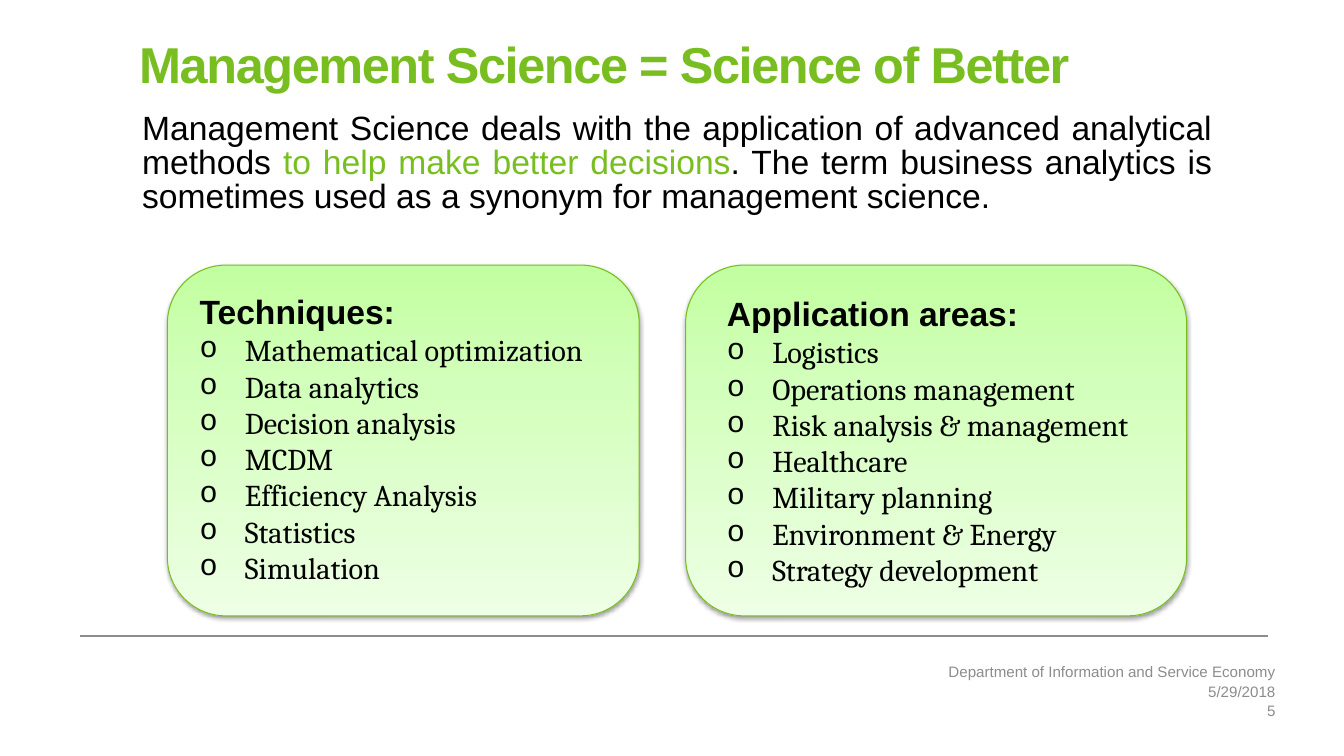
import pptx
import pptx.util
import pptx.oxml
import pptx.oxml.ns
import pptx.dml.color
import pptx.enum.shapes
import pptx.enum.text

Inches = pptx.util.Inches
Pt = pptx.util.Pt
RGBColor = pptx.dml.color.RGBColor
Align = pptx.enum.text.PP_ALIGN
Anchor = pptx.enum.text.MSO_ANCHOR

GREEN = RGBColor(0x78, 0xBE, 0x20)
PANEL_EDGE = RGBColor(0x76, 0xBE, 0x1B)
GREY = RGBColor(0x8C, 0x8C, 0x8C)
BLACK = RGBColor(0, 0, 0)
PANEL_STOPS = [
    (0, RGBColor(0xC2, 0xFF, 0xA0)),
    (35, RGBColor(0xD3, 0xFF, 0xBC)),
    (100, RGBColor(0xEE, 0xFF, 0xE5)),
]

TITLE_FONT = {"name": "Arial", "size": Pt(36), "bold": True}
BODY_FONT = {"name": "Arial", "size": Pt(24)}
HEADING_FONT = {"name": "Arial", "size": Pt(24), "bold": True}
ITEM_FONT = {"name": "Cambria", "size": Pt(21.6), "bold": False}
FOOTER_FONT = {"name": "Arial", "size": Pt(10.8)}

TITLE = "Management Science = Science of Better"
DEFINITION = [
    ("Management Science deals with the application of advanced analytical methods ", BLACK),
    ("to help make better decisions", GREEN),
    (". The term business analytics is sometimes used as a synonym for management science. ", BLACK),
]
TECHNIQUES = [
    "Mathematical optimization", "Data analytics", "Decision analysis", "MCDM",
    "Efficiency Analysis", "Statistics", "Simulation",
]
APPLICATIONS = [
    "Logistics", "Operations management", "Risk analysis & management",
    "Healthcare", "Military planning", "Environment & Energy",
    "Strategy development",
]
PANELS = [
    ((1.66, 2.63, 4.68, 3.48), (1.98, 2.89, 4.47, 3.31), "Techniques:", TECHNIQUES),
    ((6.8, 2.63, 4.97, 3.48), (7.21, 2.91, 4.47, 3.31), "Application areas:", APPLICATIONS),
]
FOOTER = [
    ("Department of Information and Service Economy", 6.58, 0.17),
    ("5/29/2018", 6.76, 0.2),
    ("5", 6.96, 0.18),
]


def set_values(target, values):
    for attribute, value in values.items():
        setattr(target, attribute, value)


def add_xml(parent, tag, content="", attributes=""):
    namespace = pptx.oxml.ns.nsdecls("a")
    parent.append(pptx.oxml.parse_xml(
        f"<a:{tag} {namespace} {attributes}>{content}</a:{tag}>"))


def set_frame(frame, margins=(0, 0, 0, 0), anchor=Anchor.TOP):
    sides = ("margin_left", "margin_top", "margin_right", "margin_bottom")
    set_values(frame, {side: Inches(margin) for side, margin in zip(sides, margins)})
    set_values(frame, {
        "word_wrap": True,
        "vertical_anchor": anchor,
        "auto_size": pptx.enum.text.MSO_AUTO_SIZE.NONE,
    })


def add_run(paragraph, text, font, color):
    run = paragraph.add_run()
    run.text = text
    set_values(run.font, font)
    run.font.color.rgb = color
    return run


def add_frame(slide, place, **frame_format):
    frame = slide.shapes.add_textbox(*map(Inches, place)).text_frame
    set_frame(frame, **frame_format)
    return frame


def add_title(slide):
    title = slide.shapes.title
    place = map(Inches, (1.38, 0.42, 10.61, 0.5))
    set_values(title, dict(zip(("left", "top", "width", "height"), place)))
    set_frame(title.text_frame)
    paragraph = title.text_frame.paragraphs[0]
    set_values(paragraph, {"alignment": Align.LEFT, "line_spacing": 0.85})
    heading = add_run(paragraph, TITLE, TITLE_FONT, GREEN)
    heading.font._element.set("spc", "-100")


def add_definition(slide):
    paragraph = add_frame(slide, (1.41, 1.12, 10.61, 1.22)).paragraphs[0]
    set_values(paragraph, {"alignment": Align.JUSTIFY, "line_spacing": 0.85})
    for text, color in DEFINITION:
        add_run(paragraph, text, BODY_FONT, color)


def add_panel(slide, place):
    panel = slide.shapes.add_shape(
        pptx.enum.shapes.MSO_SHAPE.ROUNDED_RECTANGLE, *map(Inches, place))
    panel.line.color.rgb = PANEL_EDGE
    panel.line.width = Pt(0.75)
    panel.fill.gradient()
    panel.fill.gradient_angle = 270
    stops = panel._element.spPr.find(".//" + pptx.oxml.ns.qn("a:gsLst"))
    stops.clear()
    for percent, color in PANEL_STOPS:
        add_xml(stops, "gs", f'<a:srgbClr val="{color}"/>', f'pos="{percent * 1000}"')
    add_xml(
        panel._element.spPr, "effectLst",
        f'<a:outerShdw blurRad="{Pt(3.1)}" dist="{Pt(1.6)}" dir="5400000" rotWithShape="0">'
        f'<a:srgbClr val="{BLACK}"><a:alpha val="38000"/></a:srgbClr></a:outerShdw>')


def add_list(slide, place, heading, items):
    frame = add_frame(slide, place)
    add_run(frame.paragraphs[0], heading, HEADING_FONT, BLACK)
    for item in items:
        paragraph = frame.add_paragraph()
        properties = paragraph._p.get_or_add_pPr()
        properties.set("marL", str(Inches(0.45)))
        properties.set("indent", str(Inches(-0.45)))
        add_xml(properties, "buFont", attributes='typeface="Courier New"')
        add_xml(properties, "buChar", attributes='char="o"')
        add_run(paragraph, item, ITEM_FONT, BLACK)


def add_rule(slide):
    rule = slide.shapes.add_connector(
        pptx.enum.shapes.MSO_CONNECTOR.STRAIGHT,
        *map(Inches, (0.79, 6.31, 12.58, 6.31)))
    rule.line.color.rgb = GREY
    rule.line.width = Pt(1)
    add_xml(rule._element.spPr, "effectLst")


def add_footer(slide, text, top, height):
    frame = add_frame(
        slide, (7.37, top, 5.28, height),
        margins=(0.1, 0.05, 0, 0.05), anchor=Anchor.MIDDLE)
    paragraph = frame.paragraphs[0]
    paragraph.alignment = Align.RIGHT
    add_run(paragraph, text, FOOTER_FONT, GREY)


def main():
    deck = pptx.Presentation()
    set_values(deck, {"slide_width": Inches(13.33), "slide_height": Inches(7.5)})
    slide = deck.slides.add_slide(deck.slide_layouts[5])
    add_rule(slide)
    add_title(slide)
    add_definition(slide)
    for panel_place, list_place, heading, items in PANELS:
        add_panel(slide, panel_place)
        add_list(slide, list_place, heading, items)
    for text, top, height in FOOTER:
        add_footer(slide, text, top, height)
    deck.save("out.pptx")


if __name__ == "__main__":
    main()
